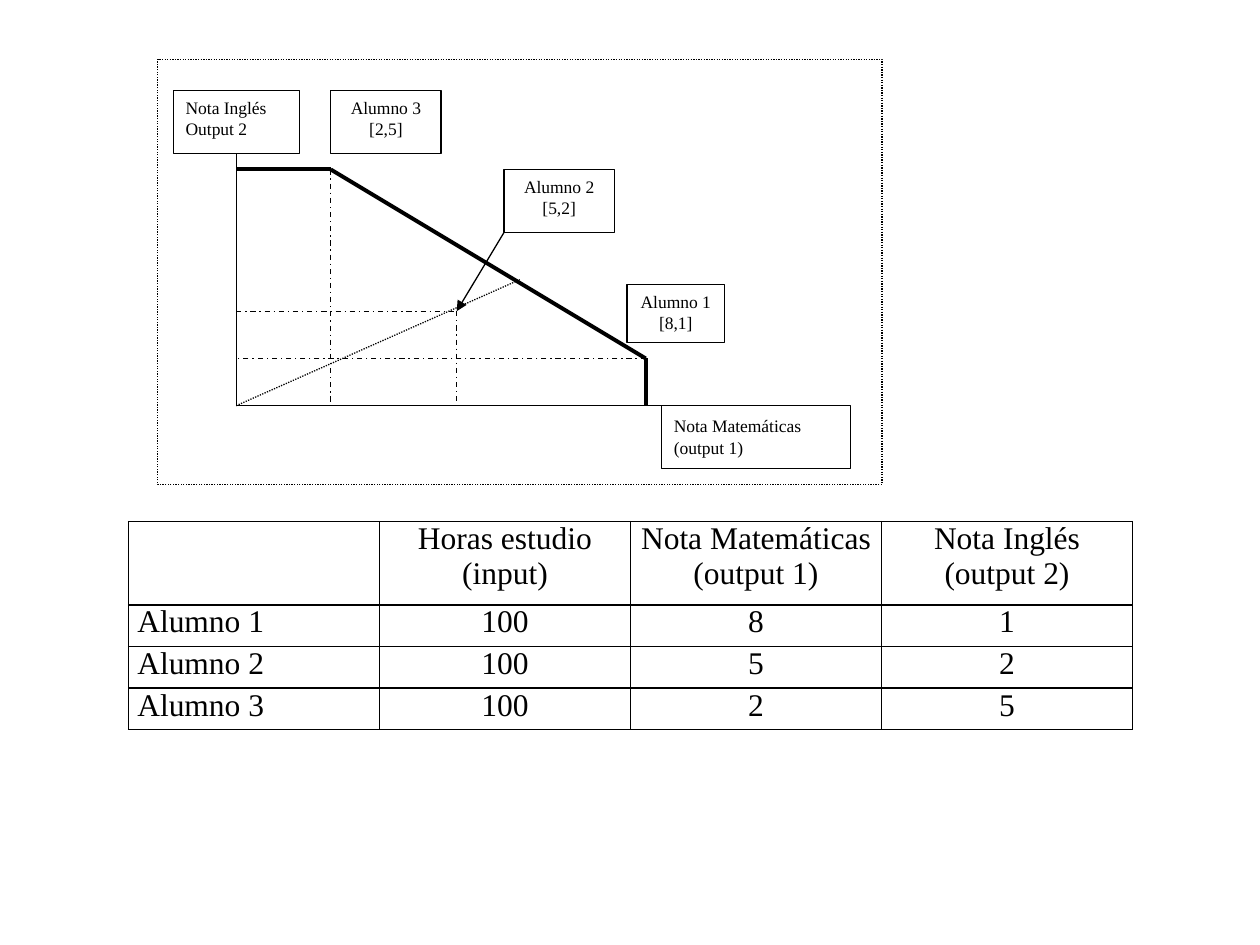
from dataclasses import dataclass

from lxml.etree import SubElement
from pptx import Presentation
from pptx.dml.color import RGBColor
from pptx.enum.dml import MSO_LINE_DASH_STYLE as Dash
from pptx.enum.shapes import MSO_CONNECTOR as Link, MSO_SHAPE as Preset
from pptx.enum.text import MSO_ANCHOR as Anchor, PP_ALIGN as Align
from pptx.oxml import parse_xml
from pptx.oxml.ns import nsdecls, qn
from pptx.shapes.autoshape import Shape
from pptx.shapes.connector import Connector
from pptx.slide import Slide
from pptx.util import Inches, Pt

BLACK = RGBColor(0x00, 0x00, 0x00)
WHITE = RGBColor(0xFF, 0xFF, 0xFF)
SERIF, SANS = "Times New Roman", "Arial"
STEP = 0.125
ORIGIN_X, ORIGIN_Y = 1.875, 3.22
CELL_FORMAT = {"margin_left": Inches(0.07), "margin_right": Inches(0.07),
               "margin_top": 0, "margin_bottom": 0, "vertical_anchor": Anchor.TOP}
FRAME_FORMAT = {"word_wrap": True, "vertical_anchor": Anchor.TOP}
PLAIN_TABLE = {"first_row": False, "horz_banding": False}


@dataclass(frozen=True)
class Piece:
    text: str
    size: float = 10
    font: str = SERIF


@dataclass(frozen=True)
class Label:
    col: float
    row: float
    cols: float
    rows: float
    lines: tuple[tuple[Piece, ...], ...]
    align: Align = Align.CENTER


@dataclass(frozen=True)
class Segment:
    start: tuple[float, float]
    end: tuple[float, float]
    width: float = 0.75
    dash: Dash | None = None
    arrow: bool = False


def student(name: str, marks: str) -> tuple[tuple[Piece, ...], ...]:
    """Give the two lines of a student's label."""
    return (Piece(name),), (Piece(marks),)


ENGLISH_AXIS = Segment((0, 20), (0, 0))
GRAPH = [
    Segment((0, 0), (30, 0)),
    Segment((26, 0), (26, 3), 2.25),
    Segment((0, 15), (6, 15), 2.25),
    Segment((6, 15), (26, 3), 2.25),
    Segment((6, 15), (6, 0), dash=Dash.DASH_DOT),
    Segment((26, 3), (0, 3), dash=Dash.DASH_DOT),
    Segment((0, 6), (14, 6), dash=Dash.DASH_DOT),
    Segment((14, 6), (14, 0), dash=Dash.DASH_DOT),
]
STUDENTS = [
    Label(6, 20, 7, 4, student("Alumno 3", "[2,5]")),
    Label(24.8, 7.7, 6.2, 3.7, student("Alumno 1", "[8,1]")),
    Label(17, 15, 7, 4, student("Alumno 2", "[5,2]")),
]
POINTERS = [
    Segment((17, 11), (14, 6), arrow=True),
    Segment((0, 0), (18, 8), dash=Dash.ROUND_DOT),
]
MATHS_LABEL = Label(27, 0, 12, 4, (
    (Piece("Nota Matemáticas"), Piece(" ", 12, SANS), Piece("(output 1)")),), Align.LEFT)
ENGLISH_LABEL = Label(-4, 20, 8, 4, student("Nota Inglés", "Output 2"), Align.LEFT)
FRAME = Label(-5, 22, 46, 27, ())
MARKS = [
    ("", "Horas estudio\n(input)", "Nota Matemáticas\n(output 1)", "Nota Inglés\n(output 2)"),
    ("Alumno 1", "100", "8", "1"),
    ("Alumno 2", "100", "5", "2"),
    ("Alumno 3", "100", "2", "5"),
]


def apply(target: object, values: dict) -> None:
    """Set each named attribute on the target."""
    for name, value in values.items():
        setattr(target, name, value)


def place(col: float, row: float) -> tuple[int, int]:
    """Turn graph columns and rows into slide coordinates."""
    return Inches(ORIGIN_X + col * STEP), Inches(ORIGIN_Y - row * STEP)


def write(frame: object, lines: tuple, align: Align) -> None:
    """Write the lines as paragraphs of a text frame."""
    for index, pieces in enumerate(lines):
        paragraph = frame.add_paragraph() if index else frame.paragraphs[0]
        paragraph.alignment = align
        for piece in pieces:
            run = paragraph.add_run()
            run.text = piece.text
            apply(run.font, {"size": Pt(piece.size), "name": piece.font})
            run.font.color.rgb = BLACK


def draw_label(slide: Slide, label: Label) -> Shape:
    """Draw a bordered box with its text."""
    box = slide.shapes.add_shape(Preset.RECTANGLE, *place(label.col, label.row),
                                 Inches(label.cols * STEP), Inches(label.rows * STEP))
    box.shadow.inherit = False
    box.fill.solid()
    box.fill.fore_color.rgb = WHITE
    box.line.color.rgb = BLACK
    box.line.width = Pt(0.75)
    apply(box.text_frame, FRAME_FORMAT)
    write(box.text_frame, label.lines, label.align)
    return box


def draw_segment(slide: Slide, segment: Segment) -> Connector:
    """Draw a straight line between two graph points."""
    line = slide.shapes.add_connector(Link.STRAIGHT, *place(*segment.start), *place(*segment.end))
    line.line.color.rgb = BLACK
    apply(line.line, {"width": Pt(segment.width), "dash_style": segment.dash})
    if segment.arrow:
        SubElement(line.line._get_or_add_ln(), qn("a:tailEnd"), type="triangle")
    SubElement(line._element.spPr, qn("a:effectLst"))
    return line


def draw_graph(slide: Slide) -> None:
    """Draw the frontier graph with its axes and labels."""
    frame = draw_label(slide, FRAME)
    frame.fill.background()
    frame.line.dash_style = Dash.ROUND_DOT
    axis = draw_segment(slide, ENGLISH_AXIS)
    for segment in GRAPH:
        draw_segment(slide, segment)
    for label in STUDENTS:
        draw_label(slide, label)
    for segment in POINTERS:
        draw_segment(slide, segment)
    draw_label(slide, MATHS_LABEL)
    axis.begin_connect(draw_label(slide, ENGLISH_LABEL), 0)


def draw_table(slide: Slide) -> None:
    """Draw the table of study hours and marks."""
    table = slide.shapes.add_table(len(MARKS), len(MARKS[0]), Inches(1.02), Inches(4.14),
                                   Inches(7.97), Inches(1.65)).table
    apply(table, PLAIN_TABLE)
    for row, texts in enumerate(MARKS):
        table.rows[row].height = Inches(0.33 if row else 0.66)
        for col, text in enumerate(texts):
            cell = table.cell(row, col)
            apply(cell, CELL_FORMAT)
            for side in "LRTB":
                cell._tc.get_or_add_tcPr().append(parse_xml(
                    f'<a:ln{side} {nsdecls("a")} w="{Pt(1)}"><a:solidFill>'
                    f'<a:srgbClr val="{BLACK}"/></a:solidFill></a:ln{side}>'))
            cell.fill.background()
            lines = tuple((Piece(line, 18),) for line in text.split("\n"))
            write(cell.text_frame, lines if text else (), Align.CENTER if col else Align.JUSTIFY)


def main() -> None:
    """Build the slide and save it."""
    deck = Presentation()
    apply(deck, {"slide_width": Inches(10), "slide_height": Inches(7.5)})
    slide = deck.slides.add_slide(deck.slide_layouts[6])
    draw_graph(slide)
    draw_table(slide)
    deck.save("out.pptx")


if __name__ == "__main__":
    main()
